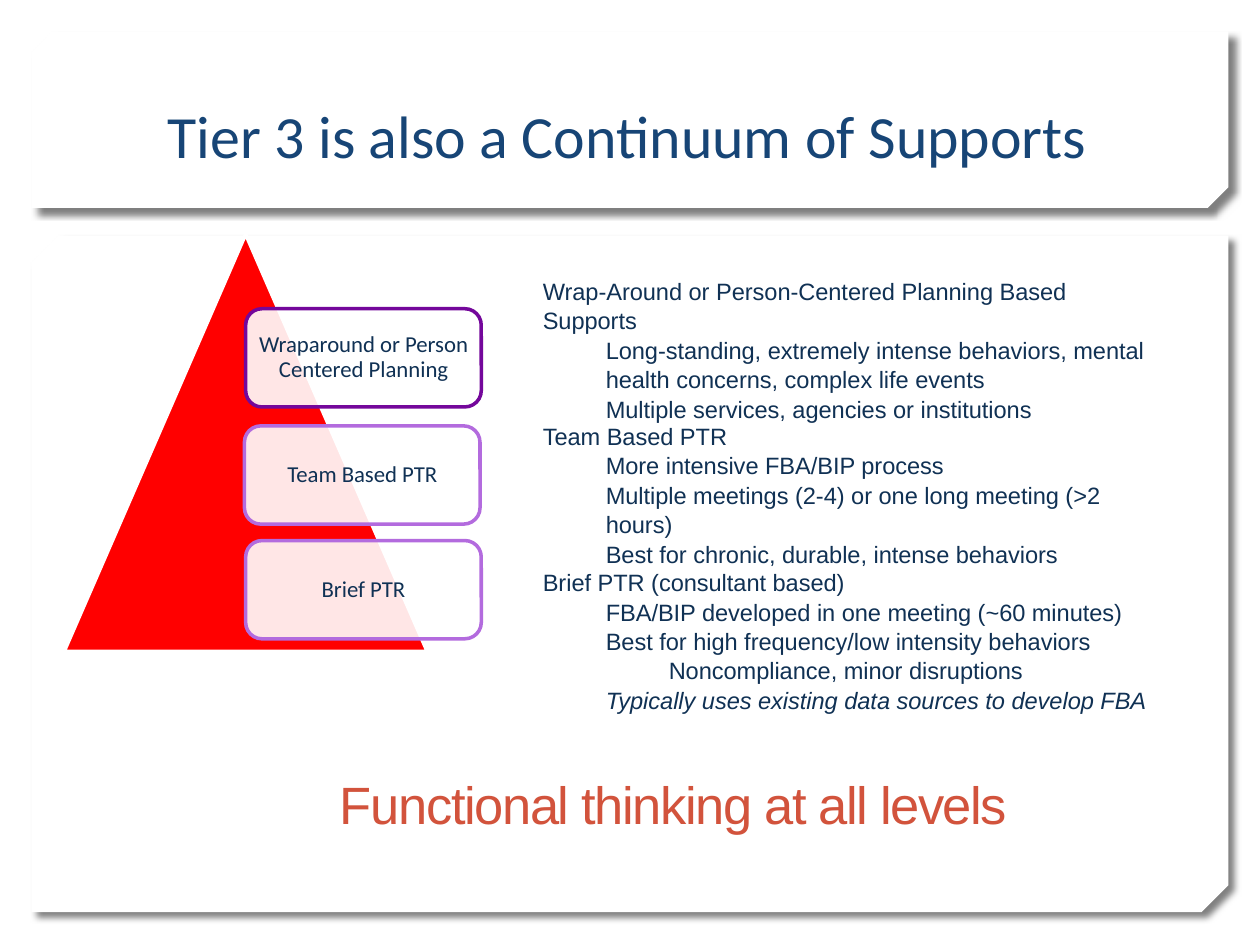
"""Build the Tier 3 continuum of supports slide."""
from lxml.etree import SubElement
from pptx import Presentation
from pptx.dml.color import RGBColor
from pptx.enum.shapes import MSO_SHAPE as SHAPE
from pptx.enum.text import MSO_ANCHOR as ANCHOR, MSO_AUTO_SIZE as AUTO, PP_ALIGN as ALIGN
from pptx.oxml import parse_xml
from pptx.oxml.ns import nsdecls, qn
from pptx.util import Inches, Pt

NAVY = "103154"


def write(tf, text, size=13.5, font="Arial", color=NAVY, align=ALIGN.LEFT,
          level=0, spacing=1.0, italic=None, tracking=None, first=True):
    p = tf.paragraphs[0] if first else tf.add_paragraph()
    p.alignment, p.level, p.line_spacing = align, level, spacing
    if level:
        p._p.get_or_add_pPr().set("marL", str(Inches(0.5 * level)))
        p._p.get_or_add_pPr().set("indent", "0")
    r = p.add_run()
    r.text = text
    r.font.size, r.font.name, r.font.italic = Pt(size), font, italic
    r.font.color.rgb = RGBColor.from_string(color)
    if tracking:
        r._r.get_or_add_rPr().set("spc", str(int(tracking * 100)))


def add_filled(kind, box, fill, line=None):
    sp = s.shapes.add_shape(kind, *map(Inches, box))
    sp.shadow.inherit = False
    sp.fill.solid()
    sp.fill.fore_color.rgb = RGBColor.from_string(fill)
    if line:
        sp.line.color.rgb = RGBColor.from_string(line)
        sp.line.width = Pt(2)
    else:
        sp.line.fill.background()
    return sp


prs = Presentation()
prs.slide_width, prs.slide_height = Inches(10), Inches(7.5)
s = prs.slides.add_slide(prs.slide_layouts[5])

for top, height, snip in [(1.87, 5.37, 0.04), (0.25, 1.4, 0.117)]:
    sp = add_filled(SHAPE.SNIP_2_DIAG_RECTANGLE, (0.25, top, 9.5, height), "FFFFFF")
    sp.adjustments[0], sp.adjustments[1] = 0, snip
    sp._element.spPr.find(qn("a:xfrm")).set("flipV", "1")
    sp._element.spPr.find(qn("a:effectLst")).append(parse_xml(
        f'<a:outerShdw {nsdecls("a")} blurRad="{Pt(4)}" dist="{Pt(5)}" dir="2700000" '
        'algn="tl" rotWithShape="0"><a:srgbClr val="000000"><a:alpha val="50000"/>'
        '</a:srgbClr></a:outerShdw>'))

title = s.shapes.title
s.shapes._spTree.append(title._element)
title.left, title.top, title.width, title.height = map(Inches, (1.23, 0.72, 7.97, 0.68))
tf = title.text_frame
tf.auto_size, tf.vertical_anchor = AUTO.NONE, ANCHOR.BOTTOM
write(tf, "Tier 3 is also a Continuum of Supports", size=34.2, font="Calibri", color="174576")

add_filled(SHAPE.ISOSCELES_TRIANGLE, (0.51, 1.86, 2.88, 3.31), "FF0000", "FFFFFF")

tiers = [
    ("Wraparound or Person Centered Planning", 1.95, 2.45, "74079B"),
    ("Team Based PTR", 1.94, 3.38, "B36BDE"),
    ("Brief PTR", 1.95, 4.29, "B36BDE"),
]
for text, left, top, line in tiers:
    sp = add_filled(SHAPE.ROUNDED_RECTANGLE, (left, top, 1.87, 0.78), "FFFFFF", line)
    clr = sp._element.spPr.find(qn("a:solidFill")).find(qn("a:srgbClr"))
    SubElement(clr, qn("a:alpha")).set("val", "90000")
    tf = sp.text_frame
    tf.word_wrap, tf.vertical_anchor = True, ANCHOR.MIDDLE
    tf.margin_left = tf.margin_right = tf.margin_top = tf.margin_bottom = Inches(0.05)
    write(tf, text, size=13, font="Calibri", align=ALIGN.CENTER, spacing=0.9)

details = [
    (2.14, 1.24, [
        (0, "Wrap-Around or Person-Centered Planning Based Supports"),
        (1, "Long-standing, extremely intense behaviors, mental health concerns, "
            "complex life events"),
        (1, "Multiple services, agencies or institutions")]),
    (3.29, 1.01, [
        (0, "Team Based PTR"),
        (1, "More intensive FBA/BIP process"),
        (1, "Multiple meetings (2-4) or one long meeting (>2 hours)"),
        (1, "Best for chronic, durable, intense behaviors")]),
    (4.45, 1.92, [
        (0, "Brief PTR (consultant based)"),
        (1, "FBA/BIP developed in one meeting (~60 minutes)"),
        (1, "Best for high frequency/low intensity behaviors"),
        (2, "Noncompliance, minor disruptions"),
        (1, "Typically uses existing data sources to develop FBA")]),
]
for top, height, lines in details:
    tf = s.shapes.add_textbox(*map(Inches, (4.21, top, 5, height))).text_frame
    tf.word_wrap = True
    for i, (level, text) in enumerate(lines):
        write(tf, text, level=level, spacing=1.04, first=i == 0,
              italic=text.startswith("Typically") or None)

tf = s.shapes.add_textbox(*map(Inches, (2.6, 6.08, 6.6, 0.61))).text_frame
tf.word_wrap = True
write(tf, "Functional thinking at all levels", size=30, color="D2533C", tracking=-0.8)

prs.save("out.pptx")
